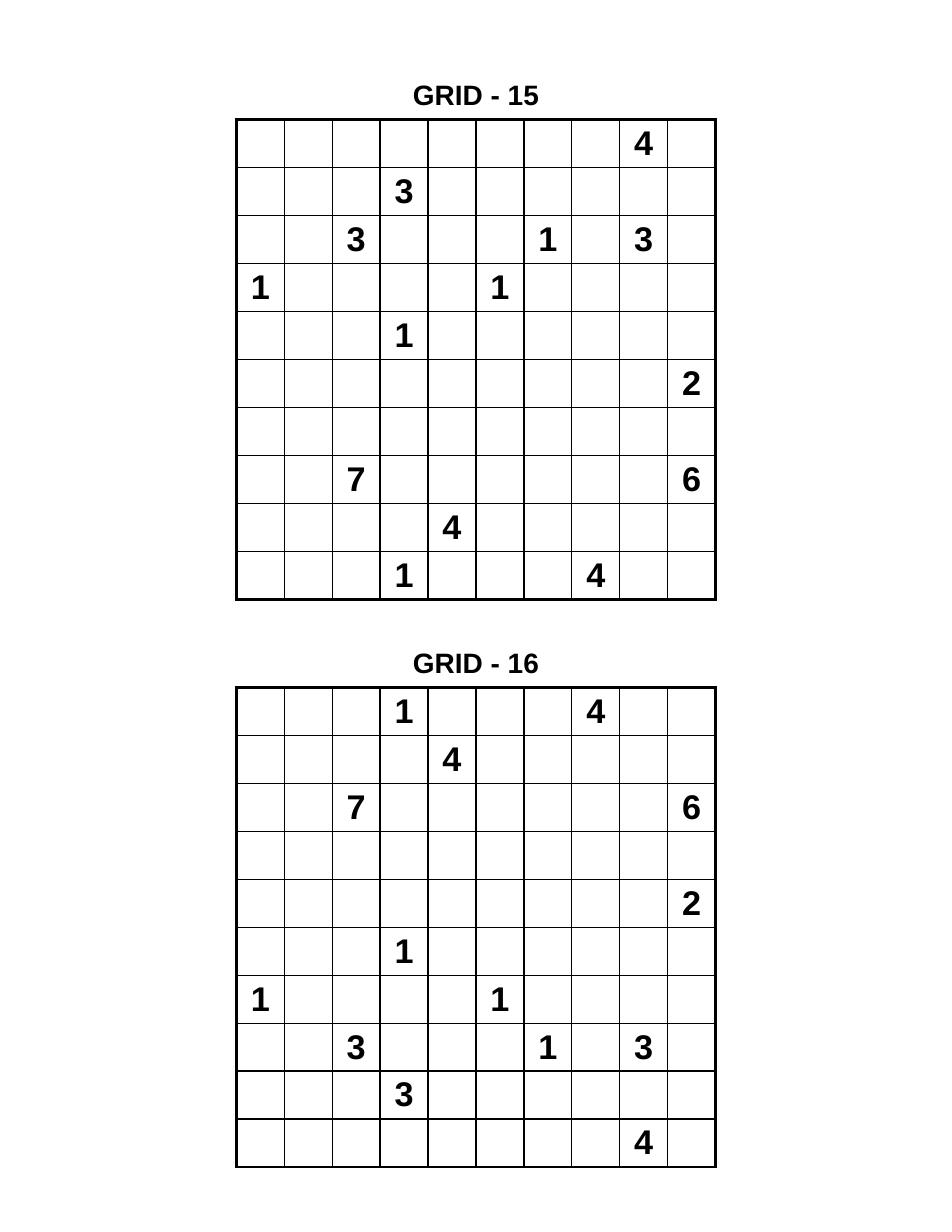
from pptx import Presentation
from pptx.dml.color import RGBColor
from pptx.enum.text import MSO_ANCHOR, MSO_AUTO_SIZE, PP_ALIGN
from pptx.oxml import parse_xml
from pptx.oxml.ns import nsdecls
from pptx.util import Inches, Pt

CLUES = [
    "........4.",
    "...3......",
    "..3...1.3.",
    "1....1....",
    "...1......",
    ".........2",
    "..........",
    "..7......6",
    "....4.....",
    "...1...4..",
]
PUZZLES = [("GRID - 15", CLUES), ("GRID - 16", CLUES[::-1])]

BLACK, WHITE = "000000", "FFFFFF"
FONT = "Arial"
LEFT, TOP, SIDE = 2.11, 0.69, 4.28
TITLE_HEIGHT, TITLE_STEP, PUZZLE_STEP = 0.3, 0.38, 5.07
INNER_LINE, OUTER_LINE = 1, 2


def color(value):
    return RGBColor.from_string(value)


def clear_margins(holder):
    holder.margin_left = holder.margin_right = 0
    holder.margin_top = holder.margin_bottom = 0


def format_text(text_frame, size):
    paragraph = text_frame.paragraphs[0]
    paragraph.alignment = PP_ALIGN.CENTER
    for run in paragraph.runs:
        run.font.name = FONT
        run.font.size = Pt(size)
        run.font.bold = True
        run.font.color.rgb = color(BLACK)


def set_borders(cell, outer_sides):
    properties = cell._tc.get_or_add_tcPr()
    for side, is_outer in outer_sides.items():
        width = Pt(OUTER_LINE if is_outer else INNER_LINE)
        properties.append(parse_xml(
            f'<a:ln{side} {nsdecls("a")} w="{width}"><a:solidFill>'
            f'<a:srgbClr val="{BLACK}"/></a:solidFill></a:ln{side}>'))


def add_title(slide, title, top):
    shape = slide.shapes.add_textbox(
        Inches(LEFT), Inches(top), Inches(SIDE), Inches(TITLE_HEIGHT))
    text_frame = shape.text_frame
    text_frame.word_wrap = True
    text_frame.auto_size = MSO_AUTO_SIZE.SHAPE_TO_FIT_TEXT
    clear_margins(text_frame)
    text_frame.text = title
    format_text(text_frame, 18)


def add_grid(slide, clues, top):
    count = len(clues)
    last = count - 1
    table = slide.shapes.add_table(
        count, count, Inches(LEFT), Inches(top), Inches(SIDE), Inches(SIDE)).table
    table.first_row = table.horz_banding = False
    for row, line in enumerate(clues):
        table.rows[row].height = table.columns[row].width = Inches(SIDE / count)
        for column, clue in enumerate(line):
            cell = table.cell(row, column)
            clear_margins(cell)
            cell.vertical_anchor = MSO_ANCHOR.MIDDLE
            set_borders(cell, {"L": column == 0, "R": column == last,
                               "T": row == 0, "B": row == last})
            cell.fill.solid()
            cell.fill.fore_color.rgb = color(WHITE)
            if clue != ".":
                cell.text_frame.text = clue
                format_text(cell.text_frame, 22)


def main():
    presentation = Presentation()
    presentation.slide_width = Inches(8.5)
    presentation.slide_height = Inches(11)
    slide = presentation.slides.add_slide(presentation.slide_layouts[6])
    for index, (title, clues) in enumerate(PUZZLES):
        top = TOP + index * PUZZLE_STEP
        add_title(slide, title, top)
        add_grid(slide, clues, top + TITLE_STEP)
    presentation.save("out.pptx")


if __name__ == "__main__":
    main()
